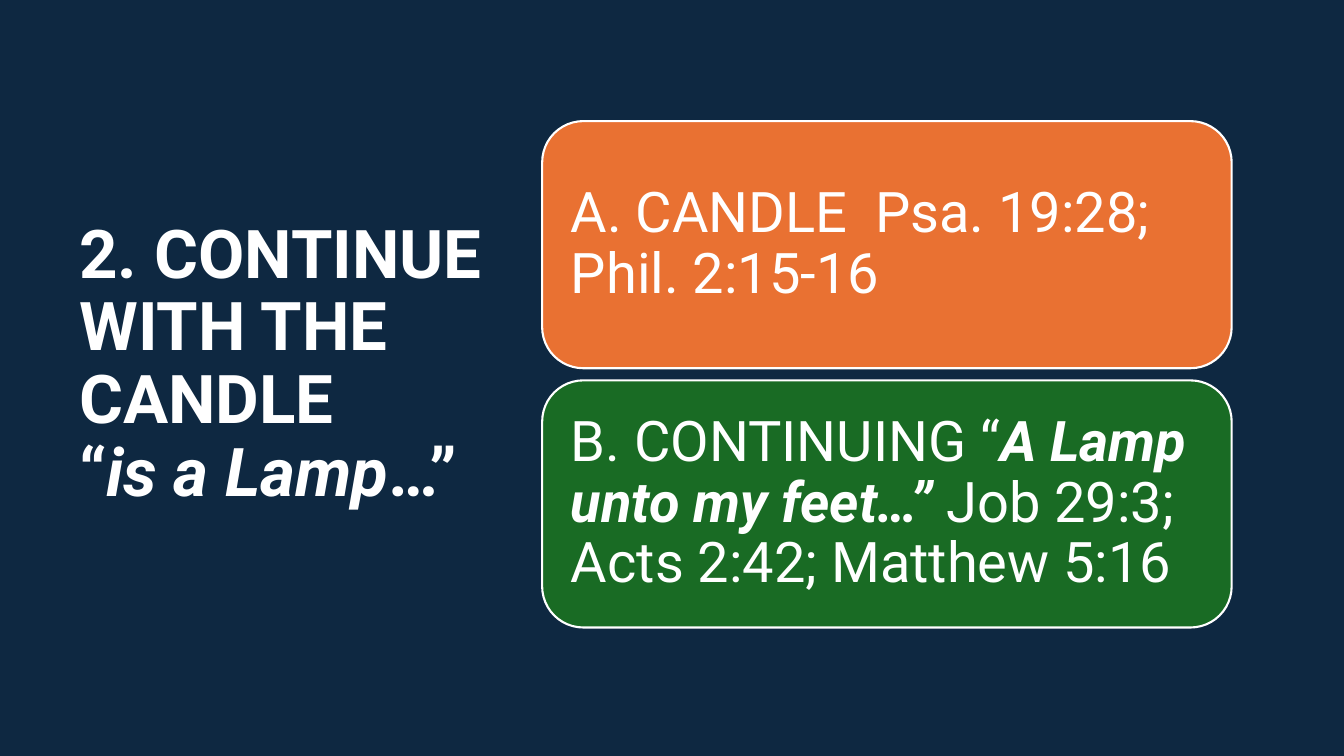
from pptx import Presentation
from pptx.dml.color import RGBColor
from pptx.enum.shapes import MSO_SHAPE
from pptx.enum.text import MSO_ANCHOR, MSO_AUTO_SIZE, PP_ALIGN
from pptx.util import Pt

COLORS = {"navy": "0E2841", "orange": "E97132", "green": "196B24", "white": "FFFFFF"}


def color(name):
    return RGBColor.from_string(COLORS[name])


def add_text(paragraph, text, size, font="Roboto", fill="white", bold=False, italic=False):
    run = paragraph.add_run()
    run.text = text
    run.font.name = font
    run.font.size = Pt(size)
    run.font.bold = bold
    run.font.italic = italic
    run.font.color.rgb = color(fill)


class LessonSlide:
    title_size = 48
    card_size = 40
    card_inset = 12

    def __init__(self, deck, background):
        self.slide = deck.slides.add_slide(deck.slide_layouts[5])
        self.slide.background.fill.solid()
        self.slide.background.fill.fore_color.rgb = color(background)

    def prepare(self, frame):
        frame.word_wrap = True
        frame.auto_size = MSO_AUTO_SIZE.NONE
        frame.vertical_anchor = MSO_ANCHOR.MIDDLE
        paragraph = frame.paragraphs[0]
        paragraph.alignment = PP_ALIGN.LEFT
        paragraph.line_spacing = 0.9
        return paragraph

    def title(self, left, top, width, height, lines):
        heading = self.slide.shapes.title
        heading.left, heading.top = Pt(left), Pt(top)
        heading.width, heading.height = Pt(width), Pt(height)
        paragraph = self.prepare(heading.text_frame)
        for index, line in enumerate(lines):
            if index:
                paragraph.add_line_break()
            for text, style in line:
                add_text(paragraph, text, self.title_size, bold=True, **style)

    def card(self, left, top, width, height, fill, phrases):
        card = self.slide.shapes.add_shape(
            MSO_SHAPE.ROUNDED_RECTANGLE, Pt(left), Pt(top), Pt(width), Pt(height))
        card.shadow.inherit = False
        card.fill.solid()
        card.fill.fore_color.rgb = color(fill)
        card.line.color.rgb = color("white")
        card.line.width = Pt(1.5)
        frame = card.text_frame
        frame.margin_left = frame.margin_right = Pt(self.card_inset)
        frame.margin_top = frame.margin_bottom = Pt(self.card_inset)
        paragraph = self.prepare(frame)
        for text, style in phrases:
            add_text(paragraph, text, self.card_size, **style)


def main():
    deck = Presentation()
    deck.slide_width, deck.slide_height = Pt(960), Pt(540)
    lesson = LessonSlide(deck, "navy")
    lesson.title(49.5, 39, 330.5, 444, [
        [("2. CONTINUE WITH THE CANDLE ", {})],
        [("“", {}), ("is a Lamp", {"italic": True}), ("…”", {})],
    ])
    points = [
        ("orange", [("A. CANDLE  Psa. 19:28; Phil. 2:15-16", {})]),
        ("green", [
            ("B. CONTINUING “", {}),
            ("A Lamp unto my feet…” ", {"bold": True, "italic": True}),
            ("Job 29:3; Acts 2:42; Matthew 5:16", {}),
        ]),
    ]
    card_height, gap = 176.5, 8.7
    for index, (fill, phrases) in enumerate(points):
        top = 86.5 + index * (card_height + gap)
        lesson.card(387.3, top, 492.5, card_height, fill, phrases)
    deck.save("out.pptx")


if __name__ == "__main__":
    main()
